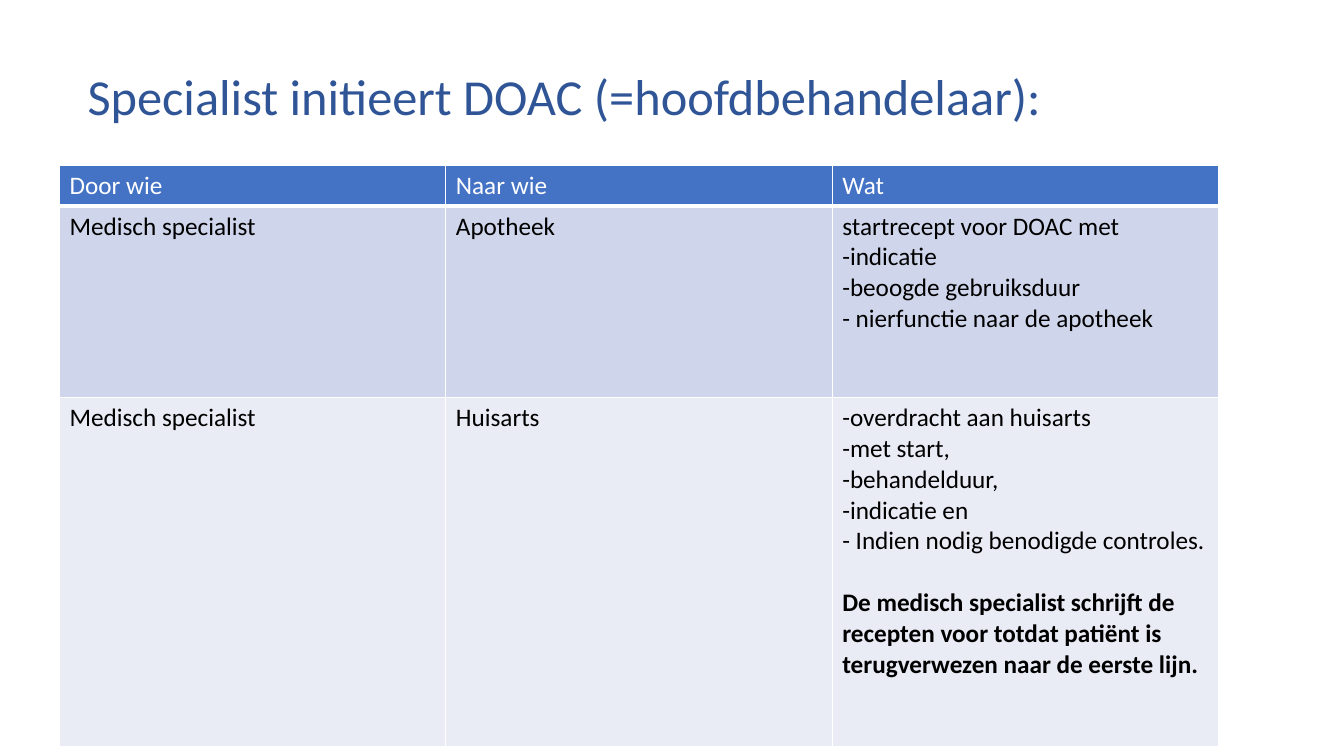
from lxml import etree
from pptx import Presentation
from pptx.dml.color import RGBColor
from pptx.oxml.ns import qn
from pptx.util import Pt

TITLE_BLUE = RGBColor(0x2F, 0x55, 0x97)
HEADER_BLUE = RGBColor(0x44, 0x72, 0xC4)
BAND_DARK = RGBColor(0xCF, 0xD5, 0xEA)
BAND_LIGHT = RGBColor(0xE9, 0xEB, 0xF5)
WHITE = RGBColor(0xFF, 0xFF, 0xFF)
BLACK = RGBColor(0x00, 0x00, 0x00)
FONT = "Calibri"
LINE_HEIGHT = 22
CLOSING = ("De medisch specialist schrijft de recepten voor totdat patiënt is "
           "terugverwezen naar de eerste lijn.")

# Per row: height, fill, text colour, bottom border width, cell texts
ROWS = [
    (29, HEADER_BLUE, WHITE, 3, ["Door wie", "Naar wie", "Wat"]),
    (137, BAND_DARK, BLACK, 1, [
        "Medisch specialist",
        "Apotheek",
        "startrecept voor DOAC met\n-indicatie\n-beoogde gebruiksduur\n"
        "- nierfunctie naar de apotheek",
    ]),
    (249, BAND_LIGHT, BLACK, 1, [
        "Medisch specialist",
        "Huisarts",
        "-overdracht aan huisarts\n-met start,\n-behandelduur,\n-indicatie en\n"
        "- Indien nodig benodigde controles.\n" + CLOSING,
    ]),
]


def style_span(span, size, color):
    span.font.name = FONT
    span.font.size = Pt(size)
    span.font.color.rgb = color


def add_border(cell, side, width):
    properties = cell._tc.get_or_add_tcPr()
    line = etree.SubElement(properties, qn("a:" + side), w=str(Pt(width)))
    fill = etree.SubElement(line, qn("a:solidFill"))
    etree.SubElement(fill, qn("a:srgbClr"), val=str(WHITE))


deck = Presentation()
deck.slide_width, deck.slide_height = Pt(960), Pt(540)
page = deck.slides.add_slide(deck.slide_layouts[6])

# Table
table_height = sum(row[0] for row in ROWS)
table = page.shapes.add_table(
    len(ROWS), 3, Pt(42.5), Pt(118), Pt(828), Pt(table_height)).table
for column in table.columns:
    column.width = Pt(276)

for row_index, (height, fill, color, bottom, texts) in enumerate(ROWS):
    table.rows[row_index].height = Pt(height)
    for column_index, text in enumerate(texts):
        cell = table.cell(row_index, column_index)
        # Borders come before the fill in the cell properties
        for side, width in (("lnL", 1), ("lnR", 1), ("lnT", 1), ("lnB", bottom)):
            add_border(cell, side, width)
        cell.fill.solid()
        cell.fill.fore_color.rgb = fill
        cell.text_frame.text = text
        for para in cell.text_frame.paragraphs:
            for span in para.runs:
                style_span(span, 18, color)
                span.font.bold = para.text == CLOSING
            if para.text == CLOSING:
                para.space_before = Pt(LINE_HEIGHT)

# Title
box = page.shapes.add_textbox(Pt(55.5), Pt(43), Pt(723), Pt(51))
box.text_frame.word_wrap = True
box.text_frame.text = "Specialist initieert DOAC (=hoofdbehandelaar):"
style_span(box.text_frame.paragraphs[0].runs[0], 36, TITLE_BLUE)

deck.save("out.pptx")
